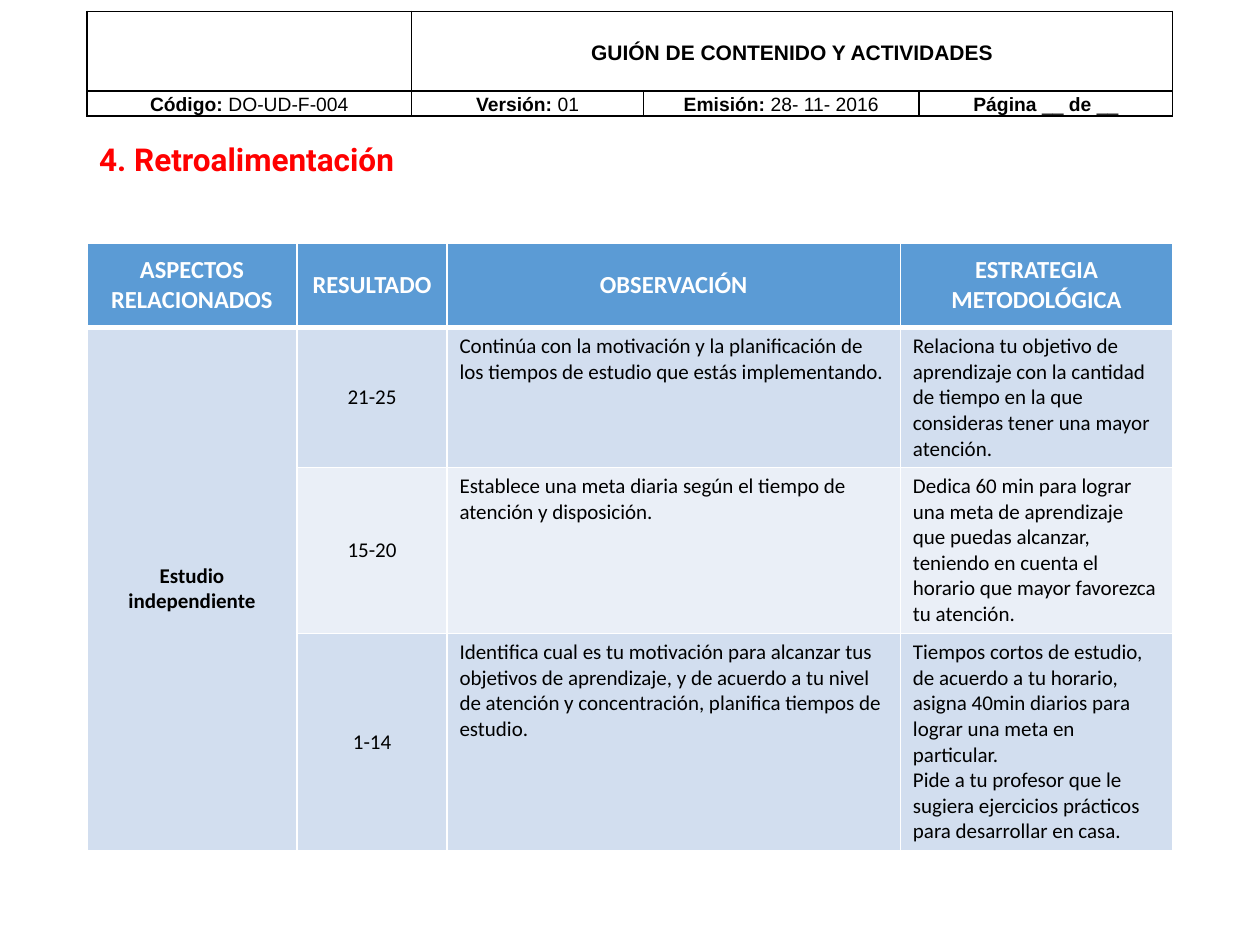
from dataclasses import dataclass

from lxml.etree import SubElement
from pptx import Presentation
from pptx.dml.color import RGBColor
from pptx.enum.text import MSO_ANCHOR, PP_ALIGN
from pptx.oxml.ns import qn
from pptx.util import Cm, Pt


@dataclass(frozen=True)
class Theme:
    black: str = "000000"
    white: str = "FFFFFF"
    red: str = "FF0000"
    blue: str = "5B9BD5"
    dark: str = "D2DEEF"
    light: str = "EAEFF7"
    title: int = 18
    head: int = 14
    body: int = 12
    small: int = 11


theme = Theme()


def write(frame, text, name, size, color, form):
    """Fill a frame; newlines split paragraphs and asterisks toggle bold."""
    frame.word_wrap = True
    for i, line in enumerate(text.split("\n")):
        para = frame.paragraphs[0] if i == 0 else frame.add_paragraph()
        for key, val in form.items():
            setattr(para, key, val)
        for j, part in enumerate(line.split("*")):
            if part:
                run = para.add_run()
                run.text = part
                font = {"name": name, "size": Pt(size), "bold": j % 2 == 1}
                for key, val in font.items():
                    setattr(run.font, key, val)
                run.font.color.rgb = RGBColor.from_string(color)


def grid(top, cols, rows, color, thick=1):
    """Add a plain ruled table; thick is the width of the line under row 0."""
    table = slide.shapes.add_table(
        len(rows), len(cols), left, Cm(top), width, Cm(sum(rows))).table
    table.first_row = table.horz_banding = False
    for col, size in zip(table.columns, cols):
        col.width = Cm(size)
    for r, size in enumerate(rows):
        table.rows[r].height = Cm(size)
        for cell in table.rows[r].cells:
            props = cell._tc.get_or_add_tcPr()
            for side in "LRTB":
                under = (r, side) in ((0, "B"), (1, "T"))
                line = SubElement(props, qn(f"a:ln{side}"),
                                  w=str(Pt(thick if under else 1)))
                fill = SubElement(line, qn("a:solidFill"))
                SubElement(fill, qn("a:srgbClr"), val=color)
            cell.fill.background()
    return table


deck = Presentation()
deck.slide_width, deck.slide_height = Cm(25.4), Cm(19.05)
slide = deck.slides.add_slide(deck.slide_layouts[6])
left, width = Cm(1.75), Cm(21.89)
center = {"alignment": PP_ALIGN.CENTER}

# Document header
banner = grid(0.23, [6.55, 4.67, 5.56, 5.11], [1.6, 0.51], theme.black)
banner.cell(0, 1).merge(banner.cell(0, 3))
labels = [
    (0, 1, "*GUIÓN DE CONTENIDO Y ACTIVIDADES", theme.body),
    (1, 0, "*Código: *DO-UD-F-004", theme.small),
    (1, 1, "*Versión:* 01", theme.small),
    (1, 2, "*Emisión:* 28- 11- 2016", theme.small),
    (1, 3, "*Página *__ *de *__", theme.small),
]
inset = {"margin_left": Cm(0.12), "margin_right": Cm(0.12), "margin_top": 0,
         "margin_bottom": 0, "vertical_anchor": MSO_ANCHOR.MIDDLE}
for r, c, text, size in labels:
    cell = banner.cell(r, c)
    for key, val in inset.items():
        setattr(cell, key, val)
    write(cell.text_frame, text, "Arial", size, theme.black,
          {**center, "line_spacing": 1.15})

# Title
title = slide.shapes.add_textbox(left, Cm(2.79), width, Cm(1.88))
write(title.text_frame, "*4. Retroalimentación", "Roboto", theme.title,
      theme.red, {"line_spacing": 0.9})

# Feedback table
body = [
    ["*ASPECTOS RELACIONADOS", "*RESULTADO", "*OBSERVACIÓN",
     "*ESTRATEGIA METODOLÓGICA"],
    ["*Estudio independiente", "21-25",
     "Continúa con la motivación y la planificación de los tiempos de "
     "estudio que estás implementando.",
     "Relaciona tu objetivo de aprendizaje con la cantidad de tiempo en la "
     "que consideras tener una mayor atención."],
    ["", "15-20",
     "Establece una meta diaria según el tiempo de atención y disposición.",
     "Dedica 60 min para lograr una meta de aprendizaje que puedas alcanzar, "
     "teniendo en cuenta el horario que mayor favorezca tu atención."],
    ["", "1-14",
     "Identifica cual es tu motivación para alcanzar tus objetivos de "
     "aprendizaje, y de acuerdo a tu nivel de atención y concentración, "
     "planifica tiempos de estudio.",
     "Tiempos cortos de estudio, de acuerdo a tu horario, asigna 40min "
     "diarios para lograr una meta en particular.\n"
     "Pide a tu profesor que le sugiera ejercicios prácticos para "
     "desarrollar en casa."],
]
table = grid(4.9, [4.24, 3.02, 9.14, 5.49], [1.7, 2.82, 3.35, 4.37],
             theme.white, thick=3)
table.first_row = True
table.cell(1, 0).merge(table.cell(3, 0))
fills = [theme.blue, theme.dark, theme.light, theme.dark]
for r, (row, shade) in enumerate(zip(body, fills)):
    size, color = ((theme.body, theme.black) if r
                   else (theme.head, theme.white))
    for c, text in enumerate(row):
        cell = table.cell(r, c)
        cell.fill.solid()
        cell.fill.fore_color.rgb = RGBColor.from_string(shade)
        mid = r == 0 or c < 2
        cell.vertical_anchor = MSO_ANCHOR.MIDDLE if mid else MSO_ANCHOR.TOP
        write(cell.text_frame, text, "Calibri", size, color,
              center if mid else {})

deck.save("out.pptx")
